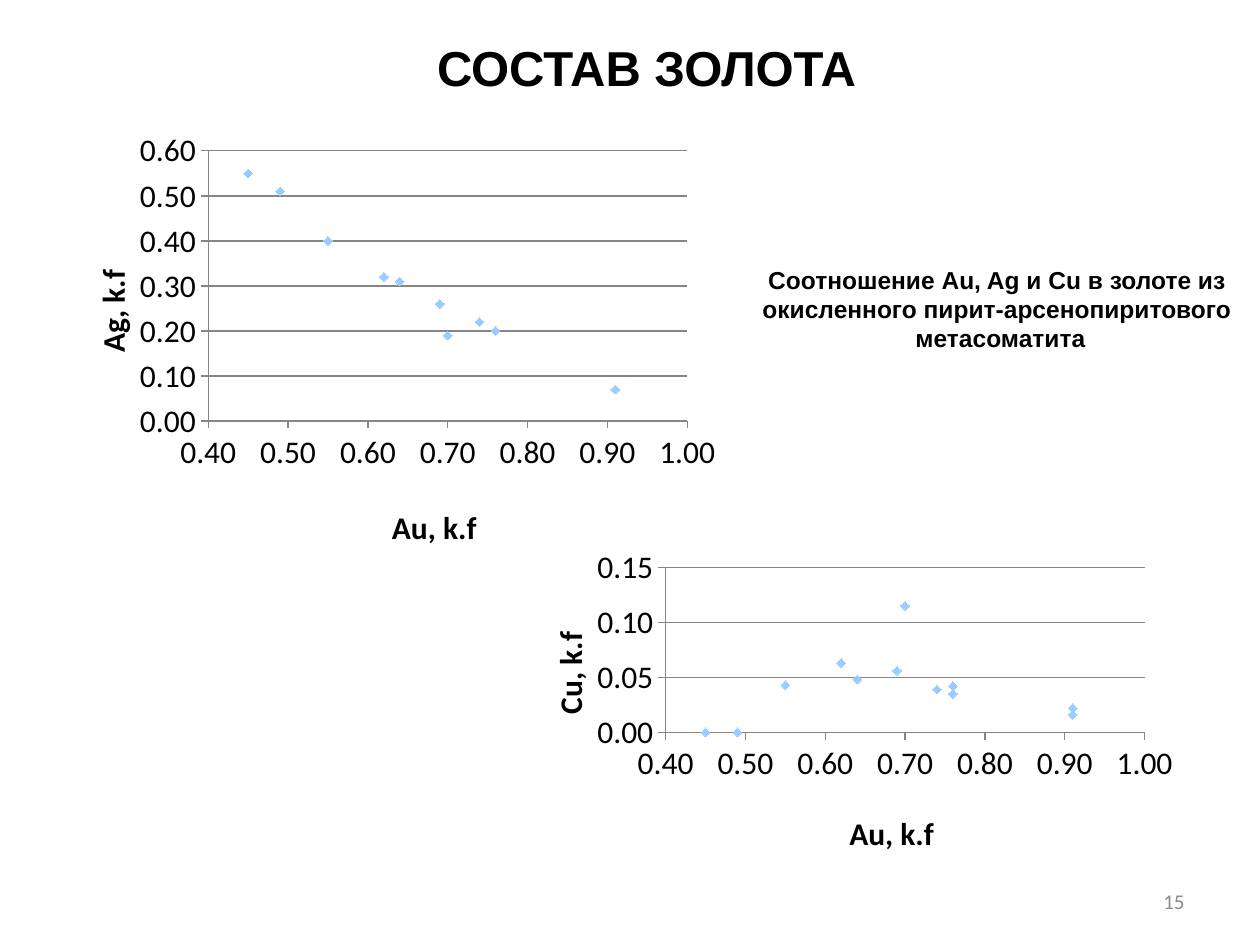
from dataclasses import dataclass
from typing import NamedTuple

from lxml.etree import SubElement
from pptx import Presentation
from pptx.chart.data import XyChartData
from pptx.dml.color import RGBColor
from pptx.enum.chart import XL_CHART_TYPE as ChartType
from pptx.enum.chart import XL_MARKER_STYLE as MarkerStyle
from pptx.enum.chart import XL_TICK_LABEL_POSITION as LabelPosition
from pptx.enum.chart import XL_TICK_MARK as TickMark
from pptx.enum.text import MSO_ANCHOR as Anchor
from pptx.enum.text import PP_ALIGN as Align
from pptx.oxml.ns import qn
from pptx.util import Inches, Pt


@dataclass(frozen=True)
class Theme:
    heading_font: str = "Arial"
    body_font: str = "Calibri"
    ink: RGBColor = RGBColor(0, 0, 0)
    muted: RGBColor = RGBColor(0x8C, 0x8C, 0x8C)
    axis: RGBColor = RGBColor(0x86, 0x86, 0x86)
    marker: RGBColor = RGBColor(0x99, 0xCC, 0xFF)
    title_size: int = 28
    chart_size: int = 18
    caption_size: int = 14
    number_size: int = 12


class Box(NamedTuple):
    """Place on a grid of 100 columns and 75 rows."""
    column: float
    row: float
    columns: float
    rows: float

    def lengths(self) -> list:
        return [Inches(value * CELL) for value in self]


@dataclass(frozen=True)
class Label:
    box: Box
    lines: tuple
    size: int
    font: str
    color: RGBColor
    bold: bool = True
    align: Align = Align.CENTER
    anchor: Anchor = Anchor.MIDDLE
    wrap: bool = True


@dataclass(frozen=True)
class Scatter:
    """Metal content against gold; places inside are shares of the chart."""
    box: Box
    metal: str
    contents: tuple
    maximum: float
    step: float
    plot: tuple
    x_title: tuple
    y_title: tuple


THEME = Theme()
CELL = 0.1
GOLD = (0.55, 0.69, 0.64, 0.62, 0.74, 0.76, 0.7, 0.91, 0.91, 0.76, 0.49, 0.45)

LABELS = (
    Label(Box(6.7, 0, 89.2, 10.6), ("СОСТАВ ЗОЛОТА",),
          THEME.title_size, THEME.heading_font, THEME.ink),
    Label(Box(59.4, 20.5, 40, 8.1),
          ("Соотношение Au, Ag и Cu в золоте из ",
           "окисленного пирит-арсенопиритового ",
           "метасоматита"),
          THEME.caption_size, THEME.heading_font, THEME.ink,
          anchor=Anchor.TOP, wrap=False),
    Label(Box(71.7, 69.5, 23.3, 4), ("15",),
          THEME.number_size, THEME.body_font, THEME.muted,
          bold=False, align=Align.RIGHT),
)

SCATTERS = (
    Scatter(Box(3.5, 9.9, 54.3, 34.6), "Ag",
            (0.4, 0.26, 0.31, 0.32, 0.22, 0.2, 0.19, 0.07, 0.07, 0.2, 0.51, 0.55),
            0.6, 0.1, (0.24, 0.06, 0.7, 0.62), (0.5, 0.86), (0.06, 0.32)),
    Scatter(Box(39.8, 43, 54.3, 29.1), "Cu",
            (0.043, 0.056, 0.048, 0.063, 0.039, 0.042, 0.115, 0.016, 0.022,
             0.035, 0, 0),
            0.15, 0.05, (0.24, 0.07, 0.7, 0.45), (0.5, 0.72), (0.06, 0.23)),
)


def place(element, shares: tuple, index: int) -> None:
    """Give a plot area or an axis title a fixed place in its chart."""
    for old in element.findall(qn("c:layout")):
        element.remove(old)
    layout = SubElement(element, qn("c:layout"))
    element.insert(index, layout)
    manual = SubElement(layout, qn("c:manualLayout"))
    settings = [("xMode", "edge"), ("yMode", "edge"), *zip("xywh", shares)]
    if len(shares) == 4:
        settings.insert(0, ("layoutTarget", "inner"))
    for name, value in settings:
        SubElement(manual, qn(f"c:{name}")).set("val", str(value))


def style_axis(axis, title: str, shares: tuple, limits: tuple, step: float) -> None:
    axis.minimum_scale, axis.maximum_scale = limits
    axis.major_unit = step
    axis.major_tick_mark = TickMark.OUTSIDE
    axis.minor_tick_mark = TickMark.NONE
    axis.tick_label_position = LabelPosition.NEXT_TO_AXIS
    axis.tick_labels.number_format = "0.00"
    axis.tick_labels.number_format_is_linked = False
    axis.format.line.color.rgb = THEME.axis
    axis.format.line.width = Pt(0.75)
    run = axis.axis_title.text_frame.paragraphs[0].add_run()
    run.text = title
    style_font(run.font, THEME.chart_size, THEME.body_font, THEME.ink, True)
    place(axis.axis_title._element, shares, 1)


def style_font(font, size: int, name: str, color: RGBColor, bold: bool) -> None:
    font.size = Pt(size)
    font.name = name
    font.color.rgb = color
    font.bold = bold


def draw_scatter(slide, scatter: Scatter) -> None:
    data = XyChartData()
    points = data.add_series("Series 1")
    for gold, content in zip(GOLD, scatter.contents):
        points.add_data_point(gold, content)
    chart = slide.shapes.add_chart(
        ChartType.XY_SCATTER, *scatter.box.lengths(), data).chart
    chart.has_legend = False
    chart.has_title = False
    style_font(chart.font, THEME.chart_size, THEME.body_font, THEME.ink, False)

    # Axes and gridlines
    style_axis(chart.category_axis, "Au, k.f", scatter.x_title, (0.4, 1), 0.1)
    style_axis(chart.value_axis, f"{scatter.metal}, k.f", scatter.y_title,
               (0, scatter.maximum), scatter.step)
    chart.category_axis.has_major_gridlines = False
    chart.value_axis.has_major_gridlines = True
    grid_line = chart.value_axis.major_gridlines.format.line
    grid_line.color.rgb = THEME.axis
    grid_line.width = Pt(0.75)

    # Markers without a joining line
    plot = chart.plots[0]
    plot.vary_by_categories = False
    series = plot.series[0]
    series.smooth = False
    series.format.line.fill.background()
    series.marker.style = MarkerStyle.DIAMOND
    series.marker.size = 5
    series.marker.format.fill.solid()
    series.marker.format.fill.fore_color.rgb = THEME.marker
    series.marker.format.line.color.rgb = THEME.marker
    place(chart._chartSpace.find(f".//{qn('c:plotArea')}"), scatter.plot, 0)


def draw_label(slide, label: Label) -> None:
    frame = slide.shapes.add_textbox(*label.box.lengths()).text_frame
    frame.word_wrap = label.wrap
    frame.vertical_anchor = label.anchor
    for index, line in enumerate(label.lines):
        paragraph = frame.add_paragraph() if index else frame.paragraphs[0]
        paragraph.alignment = label.align
        run = paragraph.add_run()
        run.text = line
        style_font(run.font, label.size, label.font, label.color, label.bold)


def main() -> None:
    presentation = Presentation()
    presentation.slide_width = Inches(100 * CELL)
    presentation.slide_height = Inches(75 * CELL)
    slide = presentation.slides.add_slide(presentation.slide_layouts[6])
    for scatter in SCATTERS:
        draw_scatter(slide, scatter)
    for label in LABELS:
        draw_label(slide, label)
    presentation.save("out.pptx")


if __name__ == "__main__":
    main()
